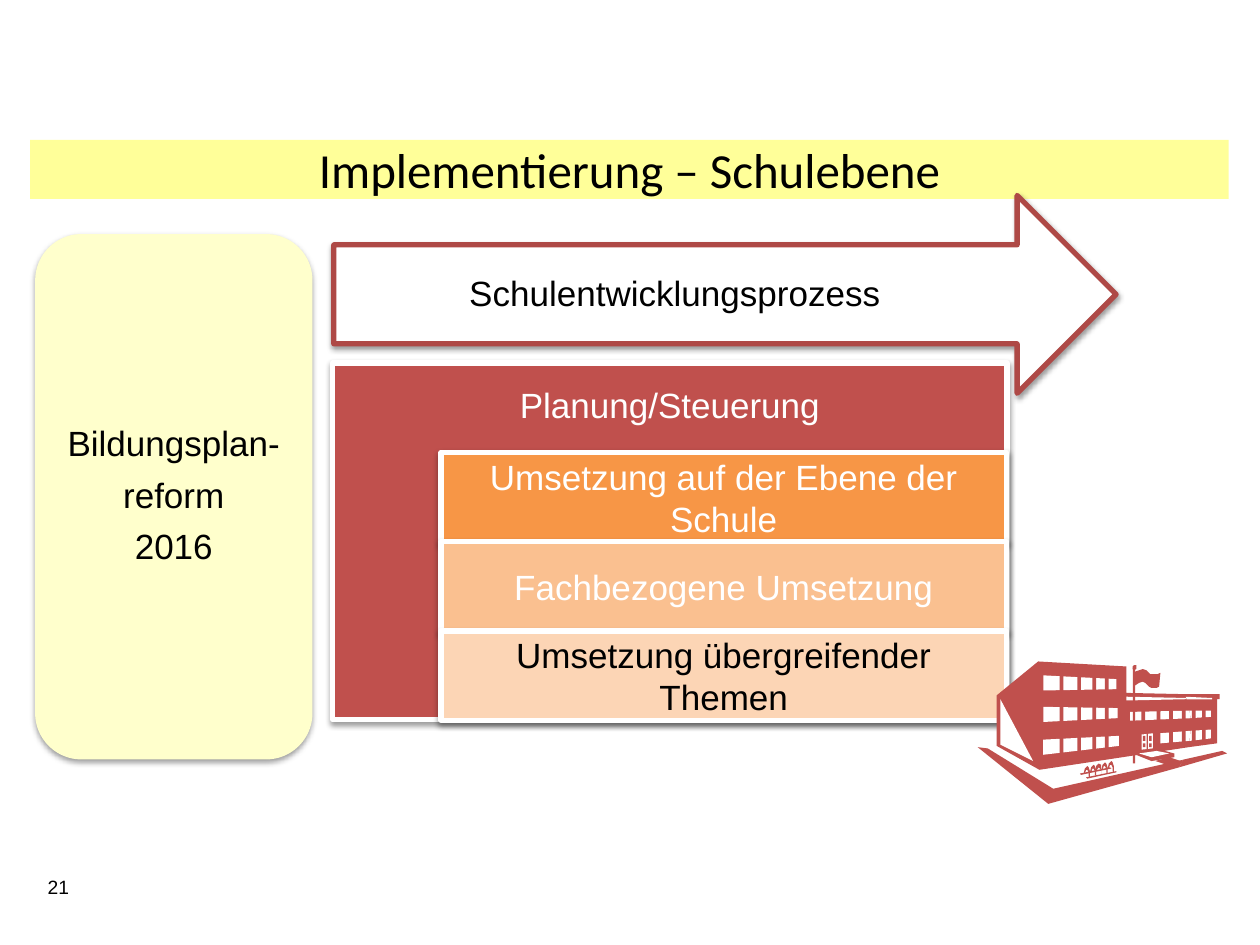
from lxml import etree
from pptx import Presentation
from pptx.dml.color import RGBColor
from pptx.enum.shapes import MSO_SHAPE
from pptx.enum.text import MSO_ANCHOR, PP_ALIGN
from pptx.oxml.ns import qn
from pptx.util import Cm, Pt

RECTANGLE = MSO_SHAPE.RECTANGLE
ROUNDED = MSO_SHAPE.ROUNDED_RECTANGLE
ARROW = MSO_SHAPE.RIGHT_ARROW
MIDDLE, TOP = MSO_ANCHOR.MIDDLE, MSO_ANCHOR.TOP
CENTER, LEFT = PP_ALIGN.CENTER, PP_ALIGN.LEFT
RED, WHITE, BLACK = "C0504D", "FFFFFF", "000000"
color = RGBColor.from_string

deck = Presentation()
deck.slide_width, deck.slide_height = Cm(25.4), Cm(19.05)
page = deck.slides.add_slide(deck.slide_layouts[5])


def add_block(shapes, kind, place, fill, line=None, shadow=False):
    """Add a filled preset shape; place is left, top, width, height in cm."""
    block = shapes.add_shape(kind, *[Cm(length) for length in place])
    block.shadow.inherit = False
    block.fill.solid()
    block.fill.fore_color.rgb = color(fill)
    if line:
        block.line.color.rgb = color(line)
        block.line.width = Pt(3)
    else:
        block.line.fill.background()
    if shadow:
        effects = block._element.spPr.find(qn("a:effectLst"))
        outer = etree.SubElement(effects, qn("a:outerShdw"), blurRad="40000",
                                 dist="20000", dir="5400000", rotWithShape="0")
        tint = etree.SubElement(outer, qn("a:srgbClr"), val=BLACK)
        etree.SubElement(tint, qn("a:alpha"), val="38000")
    return block


def write(box, lines, ink=BLACK, size=20, font="Arial", align=CENTER,
          frame_format=None, para_format=None):
    """Fill a box with one paragraph per line."""
    frame = box.text_frame
    frame.word_wrap = True
    for name, value in (frame_format or {}).items():
        setattr(frame, name, value)
    for index, line in enumerate(lines):
        para = frame.paragraphs[0] if index == 0 else frame.add_paragraph()
        para.alignment = align
        for name, value in (para_format or {}).items():
            setattr(para, name, value)
        span = para.add_run()
        span.text = line
        span.font.name, span.font.size = font, Pt(size)
        span.font.color.rgb = color(ink)


# Title on its yellow band
title = page.shapes.title
title.left, title.top, title.width, title.height = Cm(0.61), Cm(2.67), Cm(24.16), Cm(1.45)
write(title, ["Implementierung – Schulebene"], size=28, font="Calibri",
      frame_format={"vertical_anchor": MIDDLE})
band = add_block(page.shapes, RECTANGLE, (0.61, 2.82, 24.16, 1.19), "FFFF99")
title.element.addprevious(band.element)

# Planning block with the three levels stacked on it
planning = add_block(page.shapes, RECTANGLE, (6.71, 7.32, 13.59, 7.19), RED, WHITE, True)
write(planning, ["Planung/Steuerung"], WHITE,
      frame_format={"vertical_anchor": TOP, "margin_top": Cm(0.5)},
      para_format={"line_spacing": 0.9})
levels = [
    ("Umsetzung auf der Ebene der Schule", "F79646", WHITE),
    ("Fachbezogene Umsetzung", "FAC090", WHITE),
    ("Umsetzung übergreifender Themen", "FCD5B5", BLACK),
]
for row, (label, fill, ink) in enumerate(levels):
    level = add_block(page.shapes, RECTANGLE, (8.89, 9.12 + 1.8 * row, 11.4, 1.8),
                      fill, WHITE, True)
    write(level, [label], ink, frame_format={"vertical_anchor": MIDDLE})

# Reform panel
reform = add_block(page.shapes, ROUNDED, (0.71, 4.72, 5.59, 10.59), "FFFFCC", shadow=True)
write(reform, ["Bildungsplan-", "reform", "2016"],
      frame_format={"vertical_anchor": MIDDLE, "margin_left": Cm(0.38),
                    "margin_right": Cm(0.38)},
      para_format={"line_spacing": 0.9, "space_after": Pt(8)})

# Process arrow and its label
add_block(page.shapes, ARROW, (6.73, 3.94, 15.77, 3.99), WHITE, "AE4946", True)
process = page.shapes.add_textbox(Cm(7.14), Cm(4.78), Cm(12.93), Cm(2.36))
write(process, ["Schulentwicklungsprozess"],
      frame_format={"vertical_anchor": MIDDLE, "margin_left": 0, "margin_right": 0},
      para_format={"line_spacing": 0.9})

# School building, on a fine grid: outlines layer by layer
GRID = 0.0254
walls_and_steps = [
    [(942, 551), (894, 550), (894, 529), (824, 525), (791, 552), (791, 592), (825, 611),
     (944, 593), (966, 590), (966, 555), (968, 555), (968, 551)],
    [(899, 598), (914, 604), (932, 601), (932, 598), (921, 595)],
]
windows_and_door = [
    [(961, 569), (961, 564), (944, 564), (945, 570)],
    [(961, 586), (961, 579), (945, 580), (944, 588)],
    [(921, 590), (944, 588), (945, 580), (921, 582)],
    [(897, 572), (945, 570), (944, 564), (897, 565)],
    [(906, 595), (906, 583), (915, 582), (915, 594)],
    [(928, 598), (914, 601), (904, 598), (918, 596)],
    [(962, 555), (962, 554), (941, 553), (942, 555)],
    [(894, 556), (942, 555), (941, 554), (894, 553)],
    [(828, 536), (828, 548), (886, 547), (886, 539)],
    [(828, 561), (828, 573), (887, 570), (887, 562)],
    [(828, 587), (828, 599), (888, 592), (888, 584)],
    [(794, 555), (794, 591), (820, 604)],
]
paths_and_flag = [
    [(974, 598), (970, 596), (939, 603), (937, 607), (936, 609)],
    [(784, 594), (776, 593), (832, 638), (936, 609), (937, 607), (939, 603), (836, 626)],
    [(917, 604), (929, 608), (940, 605), (928, 601)],
    [(901, 533), (904, 532), (907, 531), (910, 532), (913, 535), (916, 535), (919, 535),
     (921, 534), (920, 545), (918, 546), (914, 546), (912, 545), (909, 542), (907, 541),
     (904, 542), (901, 544)],
    [(900, 532), (902, 531), (902, 528), (900, 528), (899, 529), (899, 531)],
    [(886, 612), (886, 613), (863, 618), (862, 617)],
    [(881, 609), (882, 610), (858, 615), (857, 614)],
]
rack_arch = [(883, 612), (883, 609), (882, 607), (881, 607), (880, 610), (879, 610),
             (880, 606), (882, 604), (883, 605), (884, 608), (884, 613)]
rack = [[(x - 4.75 * step, y + step) for x, y in rack_arch] for step in range(5)]

building = page.shapes.add_group_shape()
layers = [(RED, walls_and_steps), (WHITE, windows_and_door), (RED, paths_and_flag + rack)]
for fill, outlines in layers:
    for outline in outlines:
        builder = building.shapes.build_freeform(*outline[0], scale=Cm(GRID))
        builder.add_line_segments(outline[1:], close=True)
        patch = builder.convert_to_shape()
        patch.shadow.inherit = False
        patch.fill.solid()
        patch.fill.fore_color.rgb = color(fill)
        patch.line.fill.background()

# Window bars, door panes and flagpole on the same grid
bars = [(906, 562, 3, 11), (918, 562, 3, 11), (910, 581, 1, 14), (899, 530, 2, 76)]
for x, upper in [(928, 561), (938, 561), (946, 560), (954, 559)]:
    bars += [(x, upper, 3, 11), (x, upper + 19, 3, 11)]
for x, top in [(841, 535), (855, 534), (867, 533), (877, 532)]:
    bars.append((x, top, 3, 67))
for x in (907, 912):
    bars += [(x, 584, 2, 4), (x, 590, 2, 3)]
for bar in bars:
    add_block(building.shapes, RECTANGLE, [GRID * length for length in bar], RED)

# Page number
number = page.shapes.add_textbox(Cm(0.71), Cm(17.53), Cm(1.4), Cm(0.74))
write(number, ["21"], size=11, align=LEFT)

deck.save("out.pptx")
